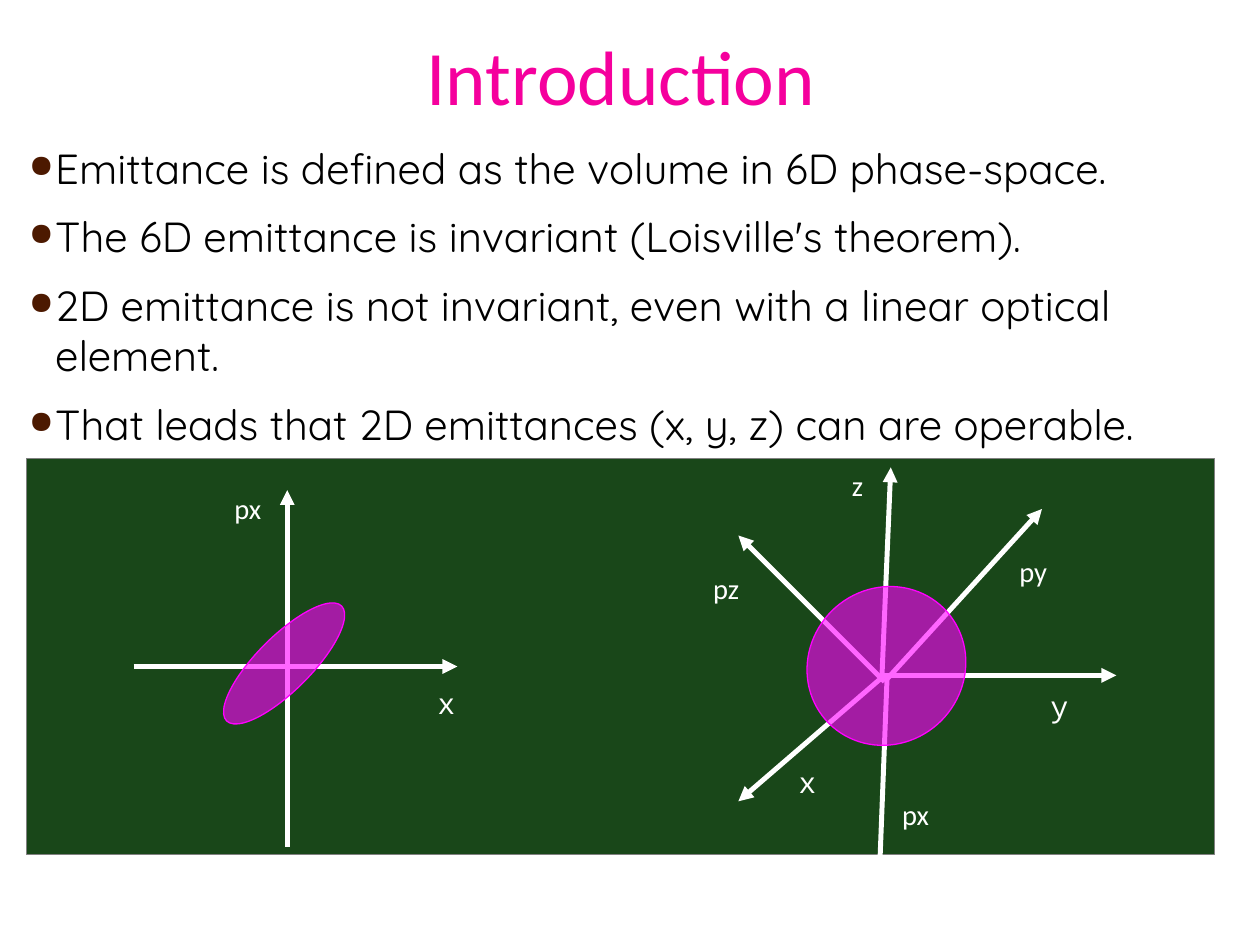
from dataclasses import dataclass
from lxml.etree import SubElement
from pptx import Presentation
from pptx.dml.color import RGBColor
from pptx.enum.shapes import MSO_CONNECTOR, MSO_SHAPE
from pptx.enum.text import MSO_ANCHOR, PP_ALIGN
from pptx.oxml.ns import qn
from pptx.util import Inches, Pt


@dataclass(frozen=True)
class Theme:
    title: str = "F5009D"
    text: str = "000000"
    bullet: str = "4C1900"
    panel: str = "003300"
    border: str = "808080"
    axis: str = "FFFFFF"
    ellipse: str = "FF00FF"
    title_font: str = "Calibri"
    body_font: str = "Quicksand"
    title_size: float = 44
    body_size: float = 24
    label_size: float = 16.3
    axis_width: float = 2.83
    border_width: float = 0.75


THEME = Theme()
COLUMNS, ROWS = 10, 7.5  # grid of one-inch cells
LABEL_SIZE = (0.42, 0.36)

BULLETS = [
    "Emittance is defined as the volume in 6D phase-space.",
    "The 6D emittance is invariant (Loisville's theorem).",
    "2D emittance is not invariant, even with a linear optical element.",
    "That leads that 2D emittances (x, y, z) can are operable.",
]
# Each axis runs from its start to its arrowhead, in columns and rows
PLANE_AXES = [((2.28, 6.72), (2.28, 3.89)), ((1.06, 5.29), (3.63, 5.29))]
SPACE_AXES = [
    ((7, 5.36), (7.07, 3.71)),
    ((7.02, 5.36), (8.86, 5.36)),
    ((7.02, 5.36), (5.86, 6.36)),
    ((7.02, 5.41), (5.86, 4.25)),
    ((7.03, 5.4), (8.27, 4.04)),
    ((7.04, 5.39), (6.98, 6.93)),
]
LABELS = [
    ("ｘ", 3.34, 5.41), ("px", 1.77, 3.86),
    ("z", 6.67, 3.68), ("ｙ", 8.21, 5.43), ("ｘ", 6.21, 6.04),
    ("px", 7.07, 6.29), ("py", 8, 4.36), ("pz", 5.57, 4.5),
]


def cells(*counts):
    return [Inches(count) for count in counts]


def add_box(page, place, margins, wrap=True):
    frame = page.shapes.add_textbox(*cells(*place)).text_frame
    frame.word_wrap = wrap
    (frame.margin_left, frame.margin_top,
     frame.margin_right, frame.margin_bottom) = cells(*margins)
    return frame


def add_span(para, text, size, font, color):
    span = para.add_run()
    span.text = text
    span.font.size = Pt(size)
    span.font.name = font
    span.font.color.rgb = RGBColor.from_string(color)


def add_title(page, text):
    frame = add_box(page, (0.66, 0.01, 8.54, 1.26), (0.1, 0.02, 0.1, 0.05))
    frame.vertical_anchor = MSO_ANCHOR.MIDDLE
    para = frame.paragraphs[0]
    para.alignment = PP_ALIGN.CENTER
    para.line_spacing = 0.95
    add_span(para, text, THEME.title_size, THEME.title_font, THEME.title)


def set_bullet(para):
    props = para._p.get_or_add_pPr()
    props.set("marL", str(Inches(0.21)))
    props.set("indent", str(-Inches(0.21)))
    color = SubElement(props, qn("a:buClr"))
    SubElement(color, qn("a:srgbClr"), val=THEME.bullet)
    SubElement(props, qn("a:buSzPct"), val="75000")
    SubElement(props, qn("a:buChar"), char="●")


def add_bullets(page, lines):
    frame = add_box(page, (0.13, 1.13, 9.52, 2.68), (0.1, 0, 0.1, 0.05))
    for index, line in enumerate(lines):
        para = frame.add_paragraph() if index else frame.paragraphs[0]
        para.space_before = para.space_after = Pt(5.2)
        set_bullet(para)
        add_span(para, line, THEME.body_size, THEME.body_font, THEME.text)


def add_filled(page, kind, place, fill, opacity, border, rotation=0):
    shape = page.shapes.add_shape(kind, *cells(*place))
    shape.shadow.inherit = False
    shape.rotation = rotation
    shape.fill.solid()
    shape.fill.fore_color.rgb = RGBColor.from_string(fill)
    color = shape.fill._xPr.find(".//" + qn("a:srgbClr"))
    SubElement(color, qn("a:alpha"), val=str(opacity * 1000))
    shape.line.color.rgb = RGBColor.from_string(border)
    shape.line.width = Pt(THEME.border_width)
    return shape


def add_ellipse(page, place):
    add_filled(page, MSO_SHAPE.OVAL, place, THEME.ellipse, 60, THEME.ellipse, 225)


def add_axis(page, start, end):
    axis = page.shapes.add_connector(MSO_CONNECTOR.STRAIGHT, *cells(*start, *end))
    axis.line.color.rgb = RGBColor.from_string(THEME.axis)
    axis.line.width = Pt(THEME.axis_width)
    SubElement(axis.line._get_or_add_ln(), qn("a:tailEnd"), type="triangle")
    SubElement(axis._element.spPr, qn("a:effectLst"))


def add_label(page, text, column, row):
    frame = add_box(page, (column, row, *LABEL_SIZE), (0.09, 0.06, 0.09, 0.04), False)
    para = frame.paragraphs[0]
    para.line_spacing = 0.93
    add_span(para, text, THEME.label_size, THEME.title_font, THEME.axis)


def main():
    deck = Presentation()
    deck.slide_width, deck.slide_height = cells(COLUMNS, ROWS)
    page = deck.slides.add_slide(deck.slide_layouts[6])

    # Dark panel behind the diagrams
    panel = add_filled(page, MSO_SHAPE.ROUNDED_RECTANGLE, (0.21, 3.64, 9.43, 3.14),
                       THEME.panel, 90, THEME.border)
    panel.adjustments[0] = 0

    # Title and statements
    add_title(page, "Introduction")
    add_bullets(page, BULLETS)

    # Phase-space axes with their names
    for start, end in PLANE_AXES + SPACE_AXES:
        add_axis(page, start, end)
    for text, column, row in LABELS:
        add_label(page, text, column, row)

    # Emittance in 2D and in 6D
    add_ellipse(page, (2.04, 4.62, 0.43, 1.29))
    add_ellipse(page, (6.42, 4.64, 1.23, 1.29))

    deck.save("out.pptx")


if __name__ == "__main__":
    main()
